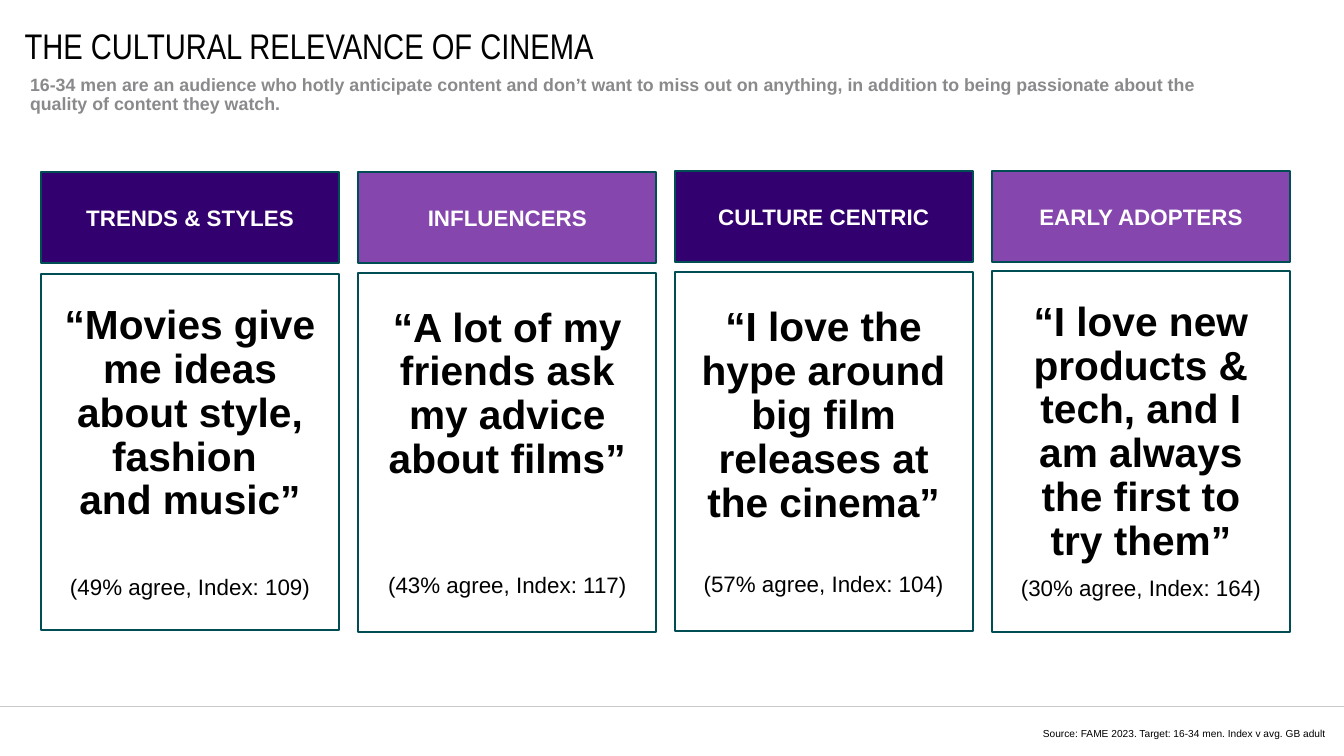
from lxml.etree import SubElement
from pptx import Presentation
from pptx.dml.color import RGBColor
from pptx.enum.shapes import MSO_CONNECTOR, MSO_SHAPE
from pptx.enum.text import MSO_ANCHOR, PP_ALIGN
from pptx.oxml.ns import qn
from pptx.util import Emu, Pt

TITLE = "THE CULTURAL RELEVANCE OF CINEMA"
SUBTITLE = ("16-34 men are an audience who hotly anticipate content and don’t want to miss out on "
            "anything, in addition to being passionate about the quality of content they watch.")
SOURCE = "Source: FAME 2023. Target: 16-34 men. Index v avg. GB adult"

# heading, quote, agreement, points above agreement, heading top, body top, body height
CARDS = [
    ("TRENDS & STYLES", "“Movies give me ideas about style, fashion \nand music”",
     "(49% agree, Index: 109)", 41, 188, 300, 389),
    ("INFLUENCERS", "“A lot of my friends ask my advice about films”",
     "(43% agree, Index: 117)", 72, 188, 299, 392),
    ("CULTURE CENTRIC", "“I love the hype around big film releases at the cinema”",
     "(57% agree, Index: 104)", 37, 187, 298, 392),
    ("EARLY ADOPTERS", "“I love new products & tech, and I am always the first to try them”",
     "(30% agree, Index: 164)", 10, 187, 296, 395),
]

BLACK = RGBColor(0x00, 0x00, 0x00)
WHITE = RGBColor(0xFF, 0xFF, 0xFF)
GREY = RGBColor(0x8A, 0x8A, 0x8D)
RULE = RGBColor(0xCA, 0xC8, 0xC8)
TEAL = RGBColor(0x00, 0x4D, 0x54)
HEAD_FILLS = (RGBColor(0x33, 0x00, 0x6F), RGBColor(0x85, 0x47, 0xAD))

SLIDE_W, SLIDE_H = 1470, 827
CARD_LEFT, CARD_W, CARD_RIGHT = 45, 326, 1411
HEAD_H, CARD_INSET = 100, 22


def px(n):
    """One px is a hundredth of an inch."""
    return Emu(n * 9144)


def add_text(tf, text, first=True, size=14, font="Arial", color=BLACK, bold=False,
             align=PP_ALIGN.LEFT, line_spacing=None, before=0):
    p = tf.paragraphs[0] if first else tf.add_paragraph()
    p.alignment = align
    p.line_spacing = line_spacing
    p.space_before = Pt(before)
    for i, line in enumerate(text.split("\n")):
        if i:
            p.add_line_break()
        r = p.add_run()
        r.text = line
        r.font.name, r.font.size, r.font.bold = font, Pt(size), bold
        r.font.color.rgb = color


def set_frame(tf, left, top, right, bottom, anchor=MSO_ANCHOR.TOP):
    tf.word_wrap = True
    tf.vertical_anchor = anchor
    tf.margin_left, tf.margin_top = px(left), px(top)
    tf.margin_right, tf.margin_bottom = px(right), px(bottom)
    return tf


def add_box(s, left, top, height, fill=None):
    sp = s.shapes.add_shape(MSO_SHAPE.RECTANGLE, px(left), px(top), px(CARD_W), px(height))
    sp.shadow.inherit = False
    if fill is None:
        sp.fill.background()
    else:
        sp.fill.solid()
        sp.fill.fore_color.rgb = fill
    sp.line.color.rgb = TEAL
    sp.line.width = Pt(1.5)
    return set_frame(sp.text_frame, *[CARD_INSET] * 4, anchor=MSO_ANCHOR.MIDDLE)


def add_label(s, left, top, width, height):
    return s.shapes.add_textbox(px(left), px(top), px(width), px(height)).text_frame


def main():
    prs = Presentation()
    prs.slide_width, prs.slide_height = px(SLIDE_W), px(SLIDE_H)
    s = prs.slides.add_slide(prs.slide_layouts[6])

    rule = s.shapes.add_connector(MSO_CONNECTOR.STRAIGHT, px(0), px(773), px(SLIDE_W), px(773))
    rule.line.color.rgb = RULE
    rule.line.width = Pt(0.5)
    SubElement(rule.element.spPr, qn("a:effectLst"))

    tf = set_frame(add_label(s, 1124, 792, 336, 21), 0, 5, 10, 5)
    add_text(tf, SOURCE, size=8, align=PP_ALIGN.RIGHT, line_spacing=Pt(8.4))

    pitch = (CARD_RIGHT - CARD_LEFT - CARD_W) / (len(CARDS) - 1)
    for i, (heading, quote, agreement, gap, head_top, body_top, body_h) in enumerate(CARDS):
        left = CARD_LEFT + round(i * pitch)
        tf = add_box(s, left, body_top, body_h)
        add_text(tf, quote, size=32, bold=True, align=PP_ALIGN.CENTER, line_spacing=0.9)
        add_text(tf, agreement, first=False, size=17.6, align=PP_ALIGN.CENTER,
                 line_spacing=0.9, before=gap)
        tf = add_box(s, left, head_top, HEAD_H, HEAD_FILLS[i % 2])
        add_text(tf, heading, size=17.6, color=WHITE, bold=True, align=PP_ALIGN.CENTER)

    tf = set_frame(add_label(s, 27, 33, 857, 32), 0, 0, 0, 0, MSO_ANCHOR.MIDDLE)
    add_text(tf, TITLE, size=28, font="Arial Narrow")
    tf = set_frame(add_label(s, 23, 78, 1359, 48), 10, 5, 10, 5)
    add_text(tf, SUBTITLE, color=GREY, bold=True, line_spacing=Pt(15))

    prs.save("out.pptx")


if __name__ == "__main__":
    main()
